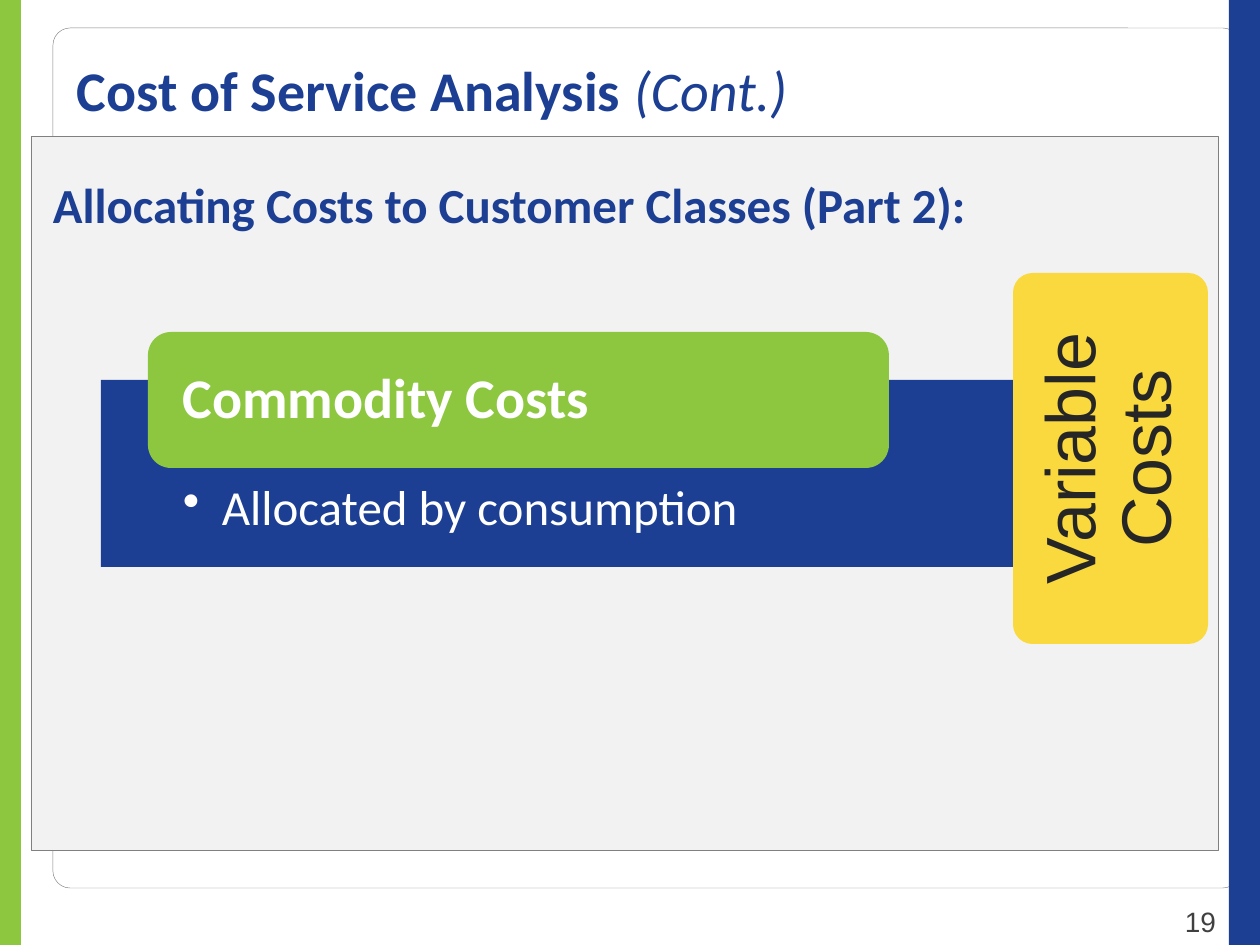
from lxml import etree
from pptx import Presentation
from pptx.dml.color import RGBColor
from pptx.enum.shapes import MSO_SHAPE
from pptx.enum.text import MSO_ANCHOR, PP_ALIGN
from pptx.oxml.ns import qn
from pptx.util import Emu, Pt

RECTANGLE, ROUNDED = MSO_SHAPE.RECTANGLE, MSO_SHAPE.ROUNDED_RECTANGLE
TOP, MIDDLE = MSO_ANCHOR.TOP, MSO_ANCHOR.MIDDLE
LEFT, CENTER, RIGHT = PP_ALIGN.LEFT, PP_ALIGN.CENTER, PP_ALIGN.RIGHT

PX_PER_INCH = 126
SLIDE_SIZE = (1260, 945)
DEFAULT_INSETS = (13, 6, 13, 6)
HANGING = 39

COLORS = {
    "white": "FFFFFF", "panel": "F2F2F2", "outline": "808080",
    "green": "8DC73F", "blue": "1C3F94", "yellow": "F9D93D",
    "dark": "262626", "gray": "404040",
}

BACKDROP = [
    (ROUNDED, (53, 28, 1187, 860), None, "outline", 0.02),
    (RECTANGLE, (31, 136, 1187, 714), "panel", "outline", None),
    (RECTANGLE, (0, 0, 21, 945), "green", None, None),
    (RECTANGLE, (1229, 0, 31, 945), "blue", None, None),
]

CARDS = [
    {"kind": RECTANGLE, "box": (101, 380, 1058, 187), "fill": "blue", "radius": None,
     "runs": [("Allocated by consumption", False, False)], "size": 28, "color": "white",
     "insets": (82, 103, 82, 28), "bullet": True},
    {"kind": ROUNDED, "box": (148, 332, 741, 136), "fill": "green", "radius": 0.17,
     "runs": [("Commodity Costs", True, False)], "size": 32, "color": "white",
     "insets": (28, 0, 28, 0), "anchor": MIDDLE},
    {"kind": ROUNDED, "box": (1013, 273, 195, 371), "fill": "yellow", "radius": 0.1,
     "runs": [("Variable Costs", False, False)], "size": 40, "color": "dark",
     "insets": (29, 29, 29, 29), "anchor": MIDDLE, "align": CENTER,
     "font": "Arial", "vertical": True},
]

LABELS = [
    {"box": (1166, 898, 63, 47), "runs": [("19", False, False)], "size": 16,
     "color": "gray", "font": "Arial", "align": RIGHT},
    {"box": (40, 168, 1167, 72), "size": 28, "color": "blue",
     "runs": [("Allocating Costs to Customer Classes (Part 2):", True, False)]},
    {"box": (64, 49, 1162, 95), "size": 32, "color": "blue",
     "runs": [("Cost of Service Analysis ", True, False), ("(Cont.)", False, True)]},
]


def px(value):
    return Emu(round(value * 914400 / PX_PER_INCH))


def rgb(name):
    return RGBColor.from_string(COLORS[name])


def add_block(slide, kind, box, fill, line=None, radius=None):
    shape = slide.shapes.add_shape(kind, *map(px, box))
    shape.shadow.inherit = False
    if radius is not None:
        shape.adjustments[0] = radius
    if fill:
        shape.fill.solid()
        shape.fill.fore_color.rgb = rgb(fill)
    else:
        shape.fill.background()
    if line:
        shape.line.color.rgb = rgb(line)
        shape.line.width = Pt(0.25)
    else:
        shape.line.fill.background()
    return shape


def add_bullet(paragraph):
    properties = paragraph._p.get_or_add_pPr()
    properties.set("marL", str(px(HANGING)))
    properties.set("indent", str(-px(HANGING)))
    etree.SubElement(properties, qn("a:buChar")).set("char", "•")


def write_text(shape, runs, size, color, font="Calibri", align=LEFT, anchor=TOP,
               insets=DEFAULT_INSETS, spacing=None, bullet=False, vertical=False):
    frame = shape.text_frame
    frame.word_wrap = True
    frame.vertical_anchor = anchor
    frame.margin_left, frame.margin_top, frame.margin_right, frame.margin_bottom = map(px, insets)
    if vertical:
        frame._txBody.bodyPr.set("vert", "vert270")
    paragraph = frame.paragraphs[0]
    paragraph.alignment = align
    if spacing:
        paragraph.line_spacing = spacing
    if bullet:
        add_bullet(paragraph)
    for text, bold, italic in runs:
        run = paragraph.add_run()
        run.text = text
        run.font.name = font
        run.font.size = Pt(size)
        run.font.bold = bold
        run.font.italic = italic
        run.font.color.rgb = rgb(color)


def main():
    presentation = Presentation()
    presentation.slide_width, presentation.slide_height = map(px, SLIDE_SIZE)
    slide = presentation.slides.add_slide(presentation.slide_layouts[6])

    for block in BACKDROP:
        add_block(slide, *block)

    for card in CARDS:
        style = dict(card)
        kind, box, fill, radius = (style.pop(key) for key in ("kind", "box", "fill", "radius"))
        write_text(add_block(slide, kind, box, fill, radius=radius), spacing=0.9, **style)

    for label in LABELS:
        style = dict(label)
        write_text(slide.shapes.add_textbox(*map(px, style.pop("box"))), **style)

    presentation.save("out.pptx")


if __name__ == "__main__":
    main()
